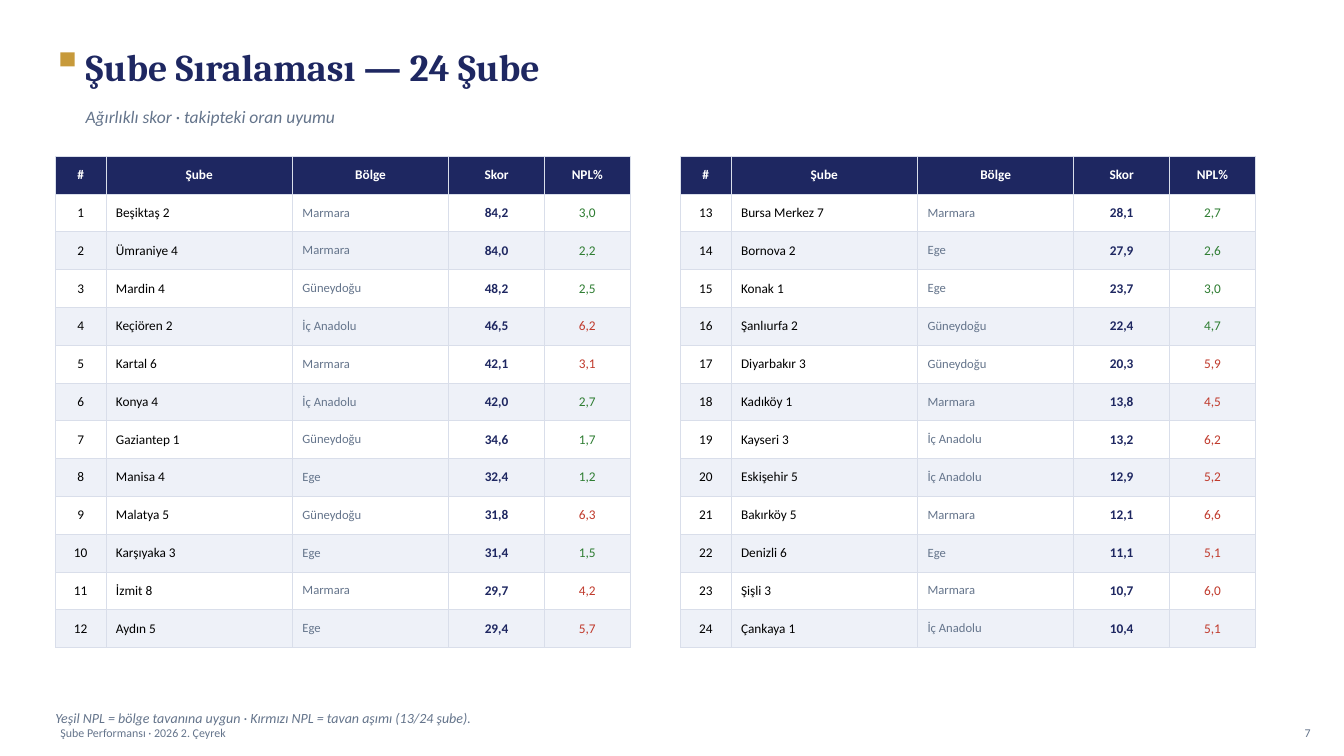
from lxml import etree
from pptx import Presentation
from pptx.dml.color import RGBColor
from pptx.enum.shapes import MSO_SHAPE
from pptx.enum.text import MSO_ANCHOR, PP_ALIGN
from pptx.oxml.ns import qn
from pptx.util import Inches, Pt

RECT = MSO_SHAPE.RECTANGLE
MIDDLE = MSO_ANCHOR.MIDDLE
LEFT, CENTER, RIGHT = PP_ALIGN.LEFT, PP_ALIGN.CENTER, PP_ALIGN.RIGHT

HEADERS = ["#", "Şube", "Bölge", "Skor", "NPL%"]
BRANCHES = [
    ("Beşiktaş 2", "Marmara", "84,2", "3,0"),
    ("Ümraniye 4", "Marmara", "84,0", "2,2"),
    ("Mardin 4", "Güneydoğu", "48,2", "2,5"),
    ("Keçiören 2", "İç Anadolu", "46,5", "6,2"),
    ("Kartal 6", "Marmara", "42,1", "3,1"),
    ("Konya 4", "İç Anadolu", "42,0", "2,7"),
    ("Gaziantep 1", "Güneydoğu", "34,6", "1,7"),
    ("Manisa 4", "Ege", "32,4", "1,2"),
    ("Malatya 5", "Güneydoğu", "31,8", "6,3"),
    ("Karşıyaka 3", "Ege", "31,4", "1,5"),
    ("İzmit 8", "Marmara", "29,7", "4,2"),
    ("Aydın 5", "Ege", "29,4", "5,7"),
    ("Bursa Merkez 7", "Marmara", "28,1", "2,7"),
    ("Bornova 2", "Ege", "27,9", "2,6"),
    ("Konak 1", "Ege", "23,7", "3,0"),
    ("Şanlıurfa 2", "Güneydoğu", "22,4", "4,7"),
    ("Diyarbakır 3", "Güneydoğu", "20,3", "5,9"),
    ("Kadıköy 1", "Marmara", "13,8", "4,5"),
    ("Kayseri 3", "İç Anadolu", "13,2", "6,2"),
    ("Eskişehir 5", "İç Anadolu", "12,9", "5,2"),
    ("Bakırköy 5", "Marmara", "12,1", "6,6"),
    ("Denizli 6", "Ege", "11,1", "5,1"),
    ("Şişli 3", "Marmara", "10,7", "6,0"),
    ("Çankaya 1", "İç Anadolu", "10,4", "5,1"),
]
OVER_CEILING = {4, 5, 9, 11, 12, *range(17, 25)}


def rgb(value):
    return RGBColor.from_string(value)


class Deck:
    GRID = 0.05
    NAVY, GOLD, GRAY, BLACK = "1E2761", "C79A3B", "64748B", "000000"
    WHITE, BAND, BORDER = "FFFFFF", "EEF1F8", "D9DEEA"
    GREEN, RED = "2E7D32", "C0392B"
    HEADING, BODY = "Cambria", "Calibri"
    COLUMNS = [10, 37, 31, 19, 17]
    ROW = 7.5

    def __init__(self, prs):
        self.s = prs.slides.add_slide(prs.slide_layouts[6])

    def units(self, *values):
        return [Inches(v * self.GRID) for v in values]

    def square(self, col, row, size, color):
        sp = self.s.shapes.add_shape(RECT, *self.units(col, row, size, size))
        sp.shadow.inherit = False
        sp.fill.solid()
        sp.fill.fore_color.rgb = rgb(color)
        sp.line.fill.background()

    def run(self, tf, text, size, color, align=LEFT, bold=False, italic=False, font=BODY):
        p = tf.paragraphs[0]
        p.alignment = align
        r = p.add_run()
        r.text = text
        r.font.name = font
        r.font.size = Pt(size)
        r.font.bold = bold
        r.font.italic = italic
        r.font.color.rgb = rgb(color)

    def text(self, box, text, size, color, **style):
        tf = self.s.shapes.add_textbox(*self.units(*box)).text_frame
        tf.margin_left = tf.margin_right = tf.margin_top = tf.margin_bottom = 0
        tf.word_wrap = True
        tf.vertical_anchor = MIDDLE
        self.run(tf, text, size, color, **style)

    def cell(self, cell, fill, text, size, color, align, bold):
        tc_pr = cell._tc.get_or_add_tcPr()
        for side in ("lnL", "lnR", "lnT", "lnB"):
            ln = etree.SubElement(tc_pr, qn("a:" + side), w=str(Pt(0.5)))
            solid = etree.SubElement(ln, qn("a:solidFill"))
            etree.SubElement(solid, qn("a:srgbClr"), val=self.BORDER)
        cell.fill.solid()
        cell.fill.fore_color.rgb = rgb(fill)
        cell.vertical_anchor = MIDDLE
        self.run(cell.text_frame, text, size, color, align, bold)

    def ranking(self, col, row, first, branches):
        count = len(branches) + 1
        box = self.units(col, row, sum(self.COLUMNS), count * self.ROW)
        table = self.s.shapes.add_table(count, len(HEADERS), *box).table
        for column, width in zip(table.columns, self.units(*self.COLUMNS)):
            column.width = width
        for table_row in table.rows:
            table_row.height = self.units(self.ROW)[0]
        for j, header in enumerate(HEADERS):
            self.cell(table.cell(0, j), self.NAVY, header, 9.5, self.WHITE, CENTER, True)
        for i, (branch, region, score, npl) in enumerate(branches, 1):
            rank = first + i - 1
            fill = self.WHITE if i % 2 else self.BAND
            npl_color = self.RED if rank in OVER_CEILING else self.GREEN
            values = [
                (str(rank), 9.5, self.BLACK, CENTER, False),
                (branch, 9.5, self.BLACK, LEFT, False),
                (region, 9, self.GRAY, LEFT, False),
                (score, 9.5, self.NAVY, CENTER, True),
                (npl, 9.5, npl_color, CENTER, False),
            ]
            for j, value in enumerate(values):
                self.cell(table.cell(i, j), fill, *value)


def main():
    prs = Presentation()
    prs.slide_width, prs.slide_height = Inches(13.33), Inches(7.5)
    deck = Deck(prs)
    deck.square(12, 10.4, 2.8, deck.GOLD)
    deck.text((17, 7.2, 232, 12), "Şube Sıralaması — 24 Şube", 27, deck.NAVY,
              bold=True, font=deck.HEADING)
    deck.text((17, 19.6, 232, 7), "Ağırlıklı skor · takipteki oran uyumu", 12.5,
              deck.GRAY, italic=True)
    half = len(BRANCHES) // 2
    for k in range(2):
        start = k * half
        deck.ranking(11 + 124 * k, 31, start + 1, BRANCHES[start:start + half])
    deck.text((11, 139, 240, 7),
              "Yeşil NPL = bölge tavanına uygun · Kırmızı NPL = tavan aşımı (13/24 şube).",
              10, deck.GRAY, italic=True)
    deck.text((12, 142.4, 140, 6), "Şube Performansı · 2026 2. Çeyrek", 8.5, deck.GRAY)
    deck.text((250, 142.4, 10, 6), "7", 8.5, deck.GRAY, align=RIGHT)
    prs.save("out.pptx")


if __name__ == "__main__":
    main()
